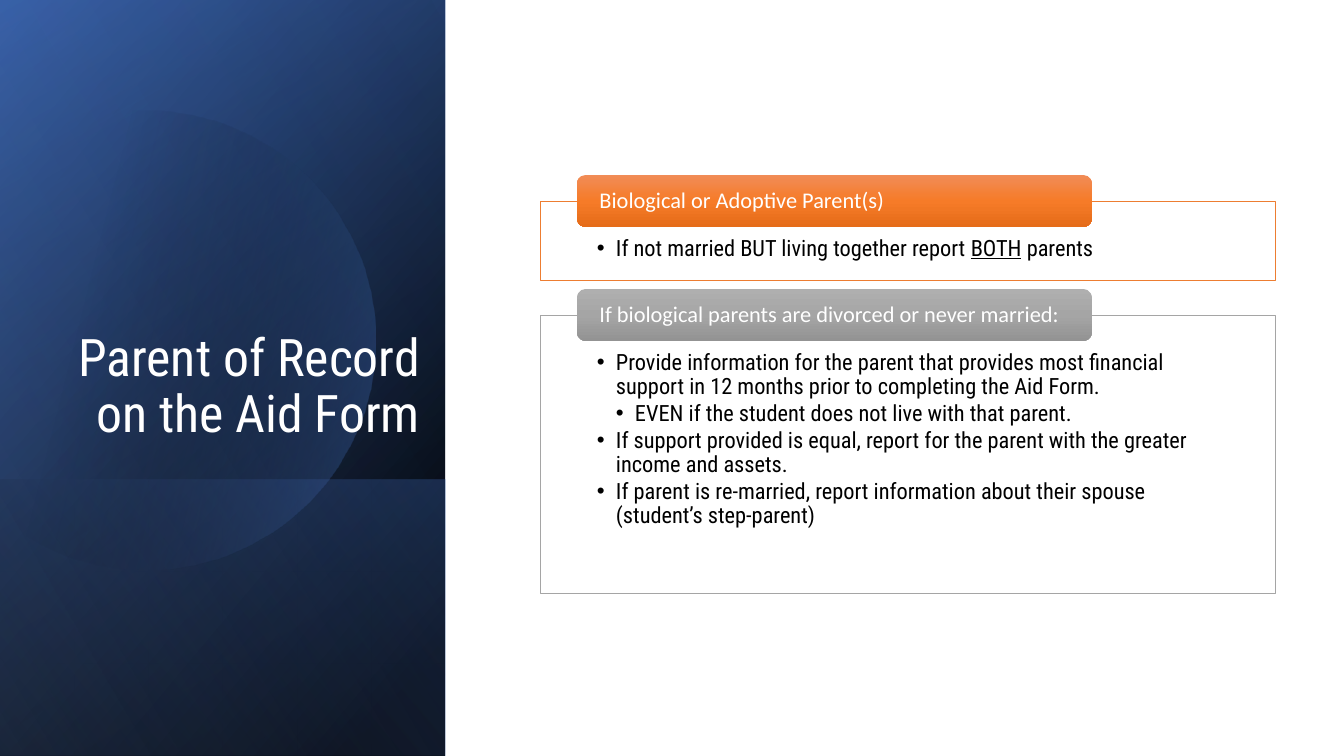
import math
from dataclasses import dataclass

from lxml import etree
from pptx import Presentation
from pptx import util as u
from pptx.dml.color import RGBColor
from pptx.enum import shapes, text
from pptx.oxml import ns

PX = 914400 / 100.8
COLOURS = {
    "black": "000000", "white": "FFFFFF", "navy": "2F5597", "blue": "4472C4",
    "sky": "8FAADC", "orange": "ED7D31", "grey": "A5A5A5",
}
DISPLAY, HEADING = "Roboto Condensed", "Calibri"


@dataclass(frozen=True)
class Stop:
    place: int
    colour: str
    opacity: int = 100


@dataclass(frozen=True)
class Panel:
    top: int
    height: int
    angle: int
    stops: tuple[Stop, ...]


@dataclass(frozen=True)
class Bullet:
    words: tuple[str, ...]
    level: int = 1
    underlined: str = ""


@dataclass(frozen=True)
class Card:
    top: int
    height: int
    colour: str
    tab_colours: tuple[str, str, str]
    heading: str
    bullets: tuple[Bullet, ...]


PANELS = (
    Panel(0, 756, 220, (Stop(8, COLOURS["black"]), Stop(100, COLOURS["navy"]))),
    Panel(0, 756, 240, (Stop(0, COLOURS["black"], 0), Stop(99, COLOURS["blue"], 46))),
    Panel(480, 276, 140, (Stop(2, COLOURS["blue"], 29), Stop(100, COLOURS["black"], 30))),
)
SHEEN = Panel(0, 756, 150, (Stop(0, COLOURS["black"], 0), Stop(99, COLOURS["sky"], 11)))
DISC_STOPS = (Stop(29, COLOURS["black"], 0), Stop(100, COLOURS["blue"], 43))

CARDS = (
    Card(201, 79, COLOURS["orange"], ("F18C57", "F67B28", "E56C19"),
         "Biological or Adoptive Parent(s)",
         (Bullet(("If not married BUT living together report ", "BOTH", " parents"),
                 underlined="BOTH"),)),
    Card(315, 278, COLOURS["grey"], ("AFAFAF", "A5A5A5", "939393"),
         "If biological parents are divorced or never married:",
         (Bullet(("Provide information for the parent that provides most financial "
                  "support in 12 months prior to completing the Aid Form.",)),
          Bullet(("EVEN if the student does not live with that parent.",), level=2),
          Bullet(("If support provided is equal, report for the parent with the "
                  "greater income and assets.",)),
          Bullet(("If parent is re-married, report information about their spouse "
                  "(student’s step-parent)",)))),
)


def px(length: float) -> u.Emu:
    return u.Emu(round(length * PX))


def fill_gradient(shape, stops: tuple[Stop, ...], angle: int) -> None:
    """Fill clockwise from left-to-right, with an opacity for each stop."""
    shape.fill.gradient()
    gradient = shape.element.spPr.find(ns.qn("a:gradFill"))
    for child in list(gradient):
        gradient.remove(child)
    stop_list = etree.SubElement(gradient, ns.qn("a:gsLst"))
    for stop in stops:
        entry = etree.SubElement(stop_list, ns.qn("a:gs"), pos=str(stop.place * 1000))
        colour = etree.SubElement(entry, ns.qn("a:srgbClr"), val=stop.colour)
        if stop.opacity < 100:
            etree.SubElement(colour, ns.qn("a:alpha"), val=str(stop.opacity * 1000))
    etree.SubElement(gradient, ns.qn("a:lin"), ang=str(angle * 60000), scaled="0")


def add_box(page, kind, left: int, top: int, width: int, height: int):
    box = page.shapes.add_shape(kind, px(left), px(top), px(width), px(height))
    box.shadow.inherit = False
    box.line.fill.background()
    return box


def add_panel(page, panel: Panel) -> None:
    box = add_box(page, shapes.MSO_SHAPE.RECTANGLE, 0, panel.top, 445, panel.height)
    fill_gradient(box, panel.stops, panel.angle)


def add_disc(page) -> None:
    """Draw the circle that the left edge cuts off."""
    centre_x, centre_y, radius = 146, 340, 229
    points = [(centre_x + radius * math.cos(math.radians(turn)),
               centre_y + radius * math.sin(math.radians(turn)))
              for turn in range(-135, 136, 3)]
    builder = page.shapes.build_freeform(*points[0], scale=PX)
    builder.add_line_segments(points[1:], close=True)
    disc = builder.convert_to_shape()
    disc.shadow.inherit = False
    disc.line.fill.background()
    fill_gradient(disc, DISC_STOPS, 14)


def set_margins(frame, left: int, top: int, right: int, bottom: int) -> None:
    frame.margin_left, frame.margin_top = px(left), px(top)
    frame.margin_right, frame.margin_bottom = px(right), px(bottom)
    frame.word_wrap = True


def format_para(para, font: str, size: int, colour: str, align) -> None:
    para.alignment = align
    para.line_spacing = 0.9
    for span in para.runs:
        span.font.name = font
        span.font.size = u.Pt(size)
        span.font.color.rgb = RGBColor.from_string(colour)


def add_bullet(para, bullet: Bullet) -> None:
    for words in bullet.words:
        span = para.add_run()
        span.text = words
        if words == bullet.underlined:
            span.font.underline = True
    format_para(para, DISPLAY, 16, COLOURS["black"], text.PP_ALIGN.LEFT)
    para.space_after = u.Pt(2)
    para.level = bullet.level
    properties = para._p.get_or_add_pPr()
    properties.set("marL", str(px(19 * bullet.level)))
    properties.set("indent", str(px(-19)))
    etree.SubElement(properties, ns.qn("a:buFont"), typeface="Arial")
    etree.SubElement(properties, ns.qn("a:buChar"), char="•")


def add_card(page, card: Card) -> None:
    body = add_box(page, shapes.MSO_SHAPE.RECTANGLE, 540, card.top, 735, card.height)
    body.fill.solid()
    body.fill.fore_color.rgb = RGBColor.from_string(COLOURS["white"])
    body.line.color.rgb = RGBColor.from_string(card.colour)
    body.line.width = u.Pt(0.5)
    frame = body.text_frame
    set_margins(frame, 57, 36, 57, 12)
    frame.vertical_anchor = text.MSO_ANCHOR.TOP
    for index, bullet in enumerate(card.bullets):
        add_bullet(frame.add_paragraph() if index else frame.paragraphs[0], bullet)

    tab = add_box(page, shapes.MSO_SHAPE.ROUNDED_RECTANGLE, 577, card.top - 26, 515, 52)
    fill_gradient(tab, tuple(Stop(50 * index, colour)
                             for index, colour in enumerate(card.tab_colours)), 90)
    set_margins(tab.text_frame, 20, 0, 20, 0)
    tab.text_frame.vertical_anchor = text.MSO_ANCHOR.MIDDLE
    tab.text_frame.text = card.heading
    format_para(tab.text_frame.paragraphs[0], HEADING, 16, COLOURS["white"],
                text.PP_ALIGN.LEFT)


def place_title(page) -> None:
    title = page.shapes.title
    title.left, title.top, title.width, title.height = map(px, (15, 138, 415, 311))
    frame = title.text_frame
    frame.text = "Parent of Record on the Aid Form"
    set_margins(frame, 10, 5, 10, 5)
    frame.auto_size = text.MSO_AUTO_SIZE.NONE
    frame.vertical_anchor = text.MSO_ANCHOR.BOTTOM
    format_para(frame.paragraphs[0], DISPLAY, 37, COLOURS["white"], text.PP_ALIGN.RIGHT)
    title.element.getparent().append(title.element)


def main() -> None:
    deck = Presentation()
    deck.slide_width, deck.slide_height = px(1344), px(756)
    page = deck.slides.add_slide(deck.slide_layouts[5])
    for panel in PANELS:
        add_panel(page, panel)
    add_disc(page)
    add_panel(page, SHEEN)
    place_title(page)
    for card in CARDS:
        add_card(page, card)
    deck.save("out.pptx")


if __name__ == "__main__":
    main()
